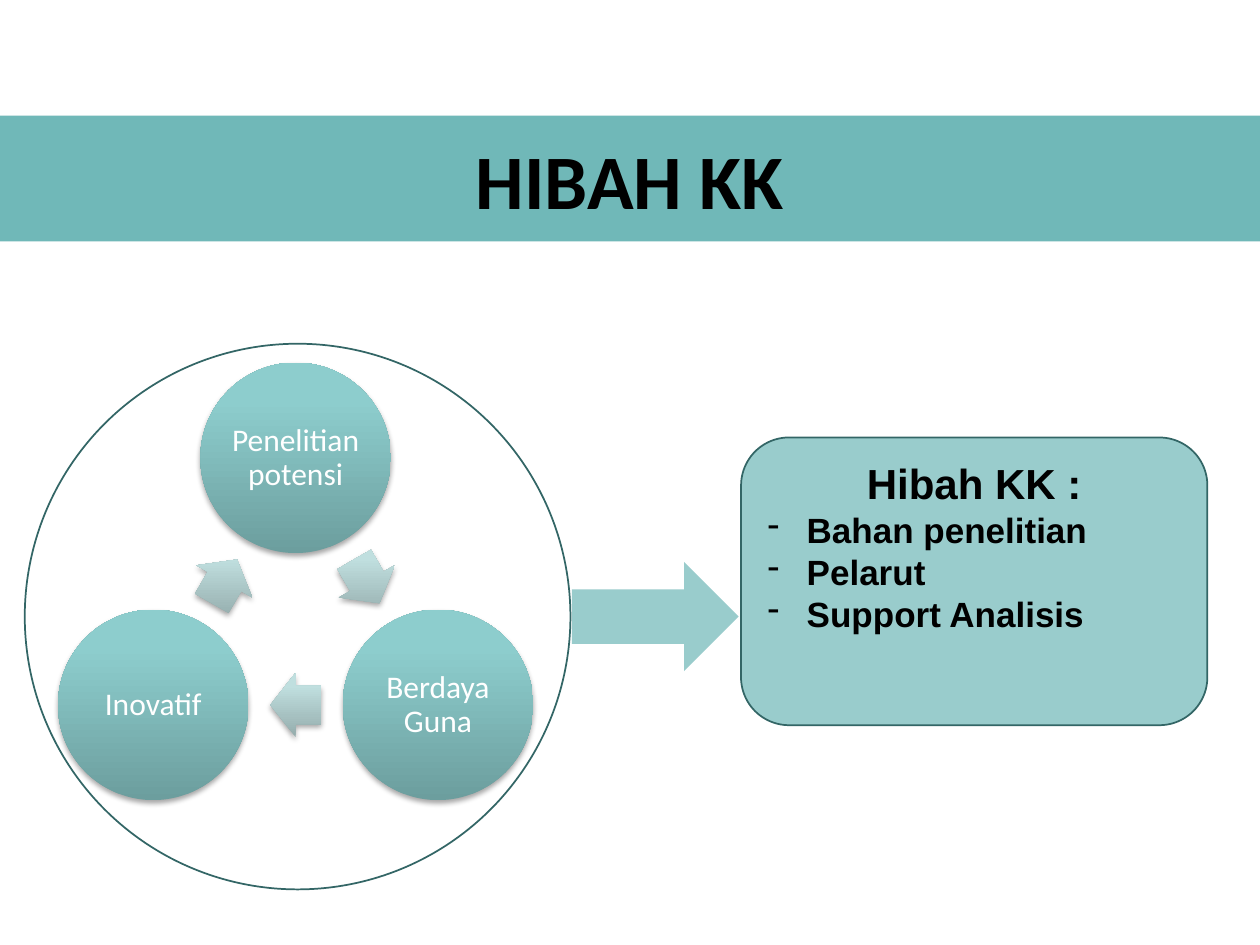
import copy

import lxml.etree
import pptx
import pptx.dml.color
import pptx.enum.shapes
import pptx.enum.text
import pptx.oxml.ns
import pptx.util

Cm = pptx.util.Cm
qn = pptx.oxml.ns.qn
MSO_SHAPE = pptx.enum.shapes.MSO_SHAPE
MSO_ANCHOR = pptx.enum.text.MSO_ANCHOR
PP_ALIGN = pptx.enum.text.PP_ALIGN


def color(value):
    return pptx.dml.color.RGBColor.from_string(value)


def write(shape, text, size, font="Calibri", fill="000000", bold=False,
          align=PP_ALIGN.CENTER, anchor=MSO_ANCHOR.MIDDLE, spacing=None, bullet=None):
    frame = shape.text_frame
    frame.word_wrap = True
    frame.vertical_anchor = anchor
    paragraph = frame.paragraphs[0]
    if paragraph.runs:
        paragraph = frame.add_paragraph()
    if bullet:
        properties = paragraph._p.get_or_add_pPr()
        properties.set("marL", str(Cm(0.79)))
        properties.set("indent", str(-Cm(0.79)))
        lxml.etree.SubElement(properties, qn("a:buChar")).set("char", bullet)
    paragraph.alignment = align
    if spacing:
        paragraph.line_spacing = spacing
    run = paragraph.add_run()
    run.text = text
    run.font.size = pptx.util.Pt(size)
    run.font.name = font
    run.font.bold = bold
    run.font.color.rgb = color(fill)


presentation = pptx.Presentation()
presentation.slide_width = Cm(25.4)
presentation.slide_height = Cm(19.05)
slide = presentation.slides.add_slide(presentation.slide_layouts[6])

circle_gradient = [(0, "6C9E9E"), (0.8, "8DCDCD"), (1, "8CCFCF")]
arrow_gradient = [(0, "94ACAC"), (0.8, "C0DFDF"), (1, "C1E0E0")]
steps = [("Penelitian potensi", 5.96, 9.23), ("Berdaya Guna", 8.83, 14.21), ("Inovatif", 3.09, 14.21)]
diameter, arrow_width, arrow_height = 3.84, 1.02, 1.3

for index, (label, x, y) in enumerate(steps):
    next_x, next_y = steps[(index + 1) % len(steps)][1:]
    circle = slide.shapes.add_shape(
        MSO_SHAPE.OVAL, Cm(x - diameter / 2), Cm(y - diameter / 2), Cm(diameter), Cm(diameter))
    arrow = slide.shapes.add_shape(
        MSO_SHAPE.RIGHT_ARROW, Cm((x + next_x - arrow_width) / 2),
        Cm((y + next_y - arrow_height) / 2), Cm(arrow_width), Cm(arrow_height))
    arrow.rotation = 60 + 120 * index
    arrow.adjustments[0] = 0.6
    arrow.adjustments[1] = 0.5
    for shape, gradient in ((circle, circle_gradient), (arrow, arrow_gradient)):
        shape.line.fill.background()
        shape.fill.gradient()
        shape.fill.gradient_angle = 90
        properties = shape._element.spPr
        properties.find(qn("a:gradFill")).set("rotWithShape", "0")
        stops = properties.find(".//" + qn("a:gsLst"))
        stops.append(copy.deepcopy(stops[0]))
        for stop, (position, value) in zip(shape.fill.gradient_stops, gradient):
            stop.position = position
            stop.color.rgb = color(value)
        shape.shadow.inherit = False
        shadow = lxml.etree.SubElement(
            properties.find(qn("a:effectLst")), qn("a:outerShdw"),
            blurRad="40000", dist="23000", dir="5400000", rotWithShape="0")
        shade = lxml.etree.SubElement(shadow, qn("a:srgbClr"), val="000000")
        lxml.etree.SubElement(shade, qn("a:alpha"), val="35000")
    frame = circle.text_frame
    frame.margin_left = frame.margin_right = frame.margin_top = frame.margin_bottom = 0
    write(circle, label, 18, fill="FFFFFF", spacing=0.9)

plain_shapes = []
for kind, left, top, width, height, fill, line in (
    (MSO_SHAPE.RECTANGLE, 0, 2.33, 25.4, 2.54, "70B8B8", None),
    (MSO_SHAPE.RIGHT_ARROW, 11.53, 11.33, 3.36, 2.2, "99CCCC", None),
    (MSO_SHAPE.OVAL, 0.5, 6.93, 11, 11, None, "336666"),
    (MSO_SHAPE.ROUNDED_RECTANGLE, 14.94, 8.82, 9.4, 5.8, "99CCCC", "336666"),
):
    shape = slide.shapes.add_shape(kind, Cm(left), Cm(top), Cm(width), Cm(height))
    shape.shadow.inherit = False
    if fill:
        shape.fill.solid()
        shape.fill.fore_color.rgb = color(fill)
    else:
        shape.fill.background()
    if line:
        shape.line.color.rgb = color(line)
        shape.line.width = pptx.util.Pt(1)
    else:
        shape.line.fill.background()
    plain_shapes.append(shape)

title, grant_arrow, ring, grant_box = plain_shapes
write(title, "HIBAH KK", 44, bold=True)
write(grant_box, "Hibah KK :", 24, font="Arial", bold=True, anchor=MSO_ANCHOR.TOP)
for item in ("Bahan penelitian", "Pelarut", "Support Analisis"):
    write(grant_box, item, 20, font="Arial", bold=True, align=PP_ALIGN.LEFT,
          anchor=MSO_ANCHOR.TOP, bullet="-")

presentation.save("out.pptx")
